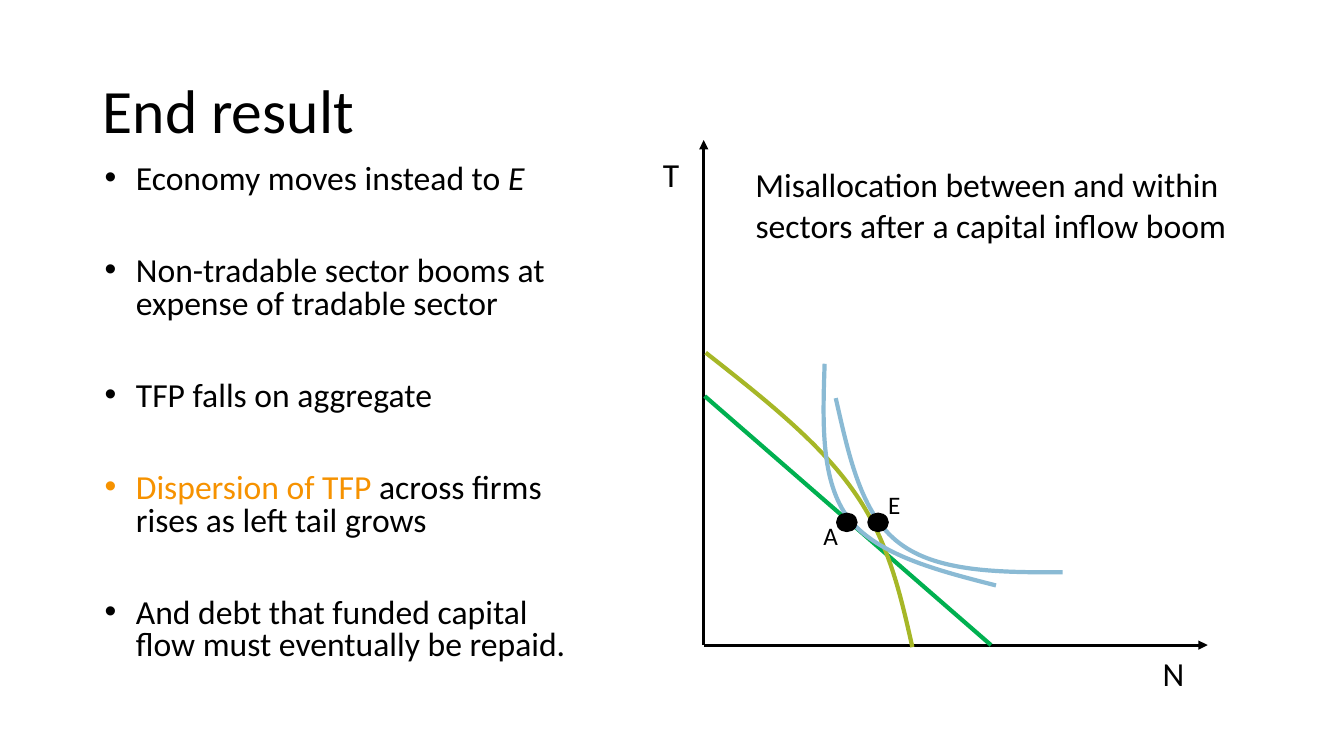
import pptx
import pptx.dml.color
import pptx.enum.shapes
import pptx.enum.text
import pptx.oxml
import pptx.oxml.ns
import pptx.util

COLORS = {"ink": "000000", "accent": "F69200", "budget": "00B050",
          "frontier": "A6B727", "indifference": "8ABAD4"}
FONT = "Calibri"
BODY_SIZE = 24
Inches, Pt = pptx.util.Inches, pptx.util.Pt

BULLETS = [
    [("Economy moves instead to ", {}), ("E", {"italic": True})],
    [("Non-tradable sector booms at expense of tradable sector", {})],
    [("TFP falls on aggregate", {})],
    [("Dispersion of TFP ", {"color": "accent"}),
     ("across firms rises as left tail grows", {})],
    [("And debt that funded capital flow must eventually be repaid.", {})],
]
CAPTION = ["Misallocation between and within", " sectors after a capital inflow boom"]

# Diagram coordinates are percentages of the axes, measured from the origin.
# Each curve is a start point followed by cubic segments of three points.
CURVES = [
    ("frontier", [(0.4, 57.9), (11.6, 49.1), (22.8, 40.3), (29.6, 30.7),
                  (36.6, 21), (39, 10.2), (41.4, -0.4)]),
    ("indifference", [(24, 55.7), (23.6, 43.9), (23.2, 32.3), (28.8, 25),
                      (34.6, 17.8), (46.2, 14.8), (58, 11.8)]),
    ("indifference", [(26.2, 48.9), (28.8, 37.5), (31.2, 25.9), (38.8, 20.2),
                      (46.4, 14.4), (58.8, 14.4), (71.2, 14.4)]),
]
EQUILIBRIA = [(28.4, 24.3), (34.6, 24.3)]
# Text, centre, box width in inches, size in points
LABELS = [("T", (-6.5, 93.2), 0.37, 24), ("N", (93.2, -5.5), 0.42, 24),
          ("A", (25.2, 21.6), 0.35, 18), ("E", (37.8, 27.9), 0.32, 18)]


def rgb(name):
    return pptx.dml.color.RGBColor.from_string(COLORS[name])


def add_run(paragraph, text, size, color="ink", italic=False):
    run = paragraph.add_run()
    run.text = text
    font_format = {"name": FONT, "size": Pt(size), "italic": italic}
    for attribute, value in font_format.items():
        setattr(run.font, attribute, value)
    run.font.color.rgb = rgb(color)


def add_text_frame(slide, box, **frame_format):
    frame = slide.shapes.add_textbox(*box).text_frame
    for attribute, value in {"word_wrap": True, **frame_format}.items():
        setattr(frame, attribute, value)
    return frame


def add_bullet(paragraph, color):
    properties = paragraph._p.get_or_add_pPr()
    properties.set("marL", str(Inches(0.31)))
    properties.set("indent", str(-Inches(0.31)))
    namespace = pptx.oxml.ns.nsdecls("a")
    for xml in (f'<a:buClr {namespace}><a:srgbClr val="{COLORS[color]}"/></a:buClr>',
                f'<a:buFont {namespace} typeface="Arial"/>',
                f'<a:buChar {namespace} char="•"/>'):
        properties.append(pptx.oxml.parse_xml(xml))


def add_title(slide, box):
    frame = add_text_frame(
        slide, box, vertical_anchor=pptx.enum.text.MSO_ANCHOR.MIDDLE)
    frame.paragraphs[0].line_spacing = 0.9
    add_run(frame.paragraphs[0], "End result", 44)


def add_findings(slide, box):
    frame = add_text_frame(slide, box)
    for index, runs in enumerate(BULLETS):
        paragraph = frame.add_paragraph() if index else frame.paragraphs[0]
        paragraph.line_spacing = 0.8
        paragraph.space_before = Pt(43 if index else 0)
        add_bullet(paragraph, runs[0][1].get("color", "ink"))
        for text, run_format in runs:
            add_run(paragraph, text, BODY_SIZE, **run_format)


def add_line(slide, start, end, color, width, arrow=False):
    line = slide.shapes.add_connector(
        pptx.enum.shapes.MSO_CONNECTOR.STRAIGHT, *start, *end)
    line.line.color.rgb = rgb(color)
    line.line.width = Pt(width)
    namespace = pptx.oxml.ns.nsdecls("a")
    if arrow:
        line.line._get_or_add_ln().append(
            pptx.oxml.parse_xml(f'<a:tailEnd {namespace} type="triangle"/>'))
    line._element.spPr.append(pptx.oxml.parse_xml(f"<a:effectLst {namespace}/>"))


def add_curve(slide, points, color):
    """Draw the points as a polyline, then join every three into a cubic segment."""
    builder = slide.shapes.build_freeform(*points[0], scale=1.0)
    builder.add_line_segments(points[1:], close=False)
    curve = builder.convert_to_shape()
    steps = list(curve._element.iter(pptx.oxml.ns.qn("a:lnTo")))
    for first in range(0, len(steps), 3):
        cubic = pptx.oxml.parse_xml(
            f'<a:cubicBezTo {pptx.oxml.ns.nsdecls("a")}/>')
        steps[first].addprevious(cubic)
        for step in steps[first:first + 3]:
            cubic.append(step[0])
            step.getparent().remove(step)
    curve.shadow.inherit = False
    curve.fill.background()
    curve.line.color.rgb = rgb(color)
    curve.line.width = Pt(3)


def add_equilibrium(slide, center):
    width, height = Inches(0.2), Inches(0.18)
    dot = slide.shapes.add_shape(
        pptx.enum.shapes.MSO_SHAPE.OVAL,
        center[0] - width // 2, center[1] - height // 2, width, height)
    dot.shadow.inherit = False
    dot.fill.solid()
    dot.fill.fore_color.rgb = rgb("ink")
    dot.line.color.rgb = rgb("ink")
    dot.line.width = Pt(1)


def add_label(slide, text, center, width, size):
    height = Inches(0.1) + Pt(size * 1.2)
    frame = add_text_frame(
        slide, (center[0] - width // 2, center[1] - height // 2, width, height),
        word_wrap=False)
    frame.paragraphs[0].alignment = pptx.enum.text.PP_ALIGN.CENTER
    add_run(frame.paragraphs[0], text, size)


def add_caption(slide, box):
    frame = add_text_frame(slide, box, word_wrap=False)
    for index, text in enumerate(CAPTION):
        paragraph = frame.add_paragraph() if index else frame.paragraphs[0]
        paragraph.alignment = pptx.enum.text.PP_ALIGN.CENTER
        add_run(paragraph, text, BODY_SIZE)


def add_diagram(slide, box):
    left, top, width, height = box

    def place(point):
        return (round(left + width * point[0] / 100),
                round(top + height * (1 - point[1] / 100)))

    for axis_end in ((0, 100), (100, 0)):
        add_line(slide, place((0, 0)), place(axis_end), "ink", 2.25, arrow=True)
    add_line(slide, place((0.2, 49.3)), place((57, 0)), "budget", 3)
    for color, points in CURVES:
        add_curve(slide, [place(point) for point in points], color)
    for center in EQUILIBRIA:
        add_equilibrium(slide, place(center))
    for text, center, label_width, size in LABELS:
        add_label(slide, text, place(center), Inches(label_width), size)
    add_caption(slide, (*place((6.2, 96.2)), width, round(height * 0.18)))


def main():
    presentation = pptx.Presentation()
    presentation.slide_width = Inches(13.33)
    presentation.slide_height = Inches(7.5)
    slide = presentation.slides.add_slide(presentation.slide_layouts[6])

    def region(left, top, width, height):
        """Turn shares of the slide's size into a box."""
        across, down = presentation.slide_width, presentation.slide_height
        return (round(left * across), round(top * down),
                round(width * across), round(height * down))

    add_title(slide, region(0.069, 0.053, 0.863, 0.193))
    add_findings(slide, region(0.0705, 0.211, 0.364, 0.736))
    add_diagram(slide, region(0.5236, 0.1853, 0.375, 0.668))
    presentation.save("out.pptx")


if __name__ == "__main__":
    main()
